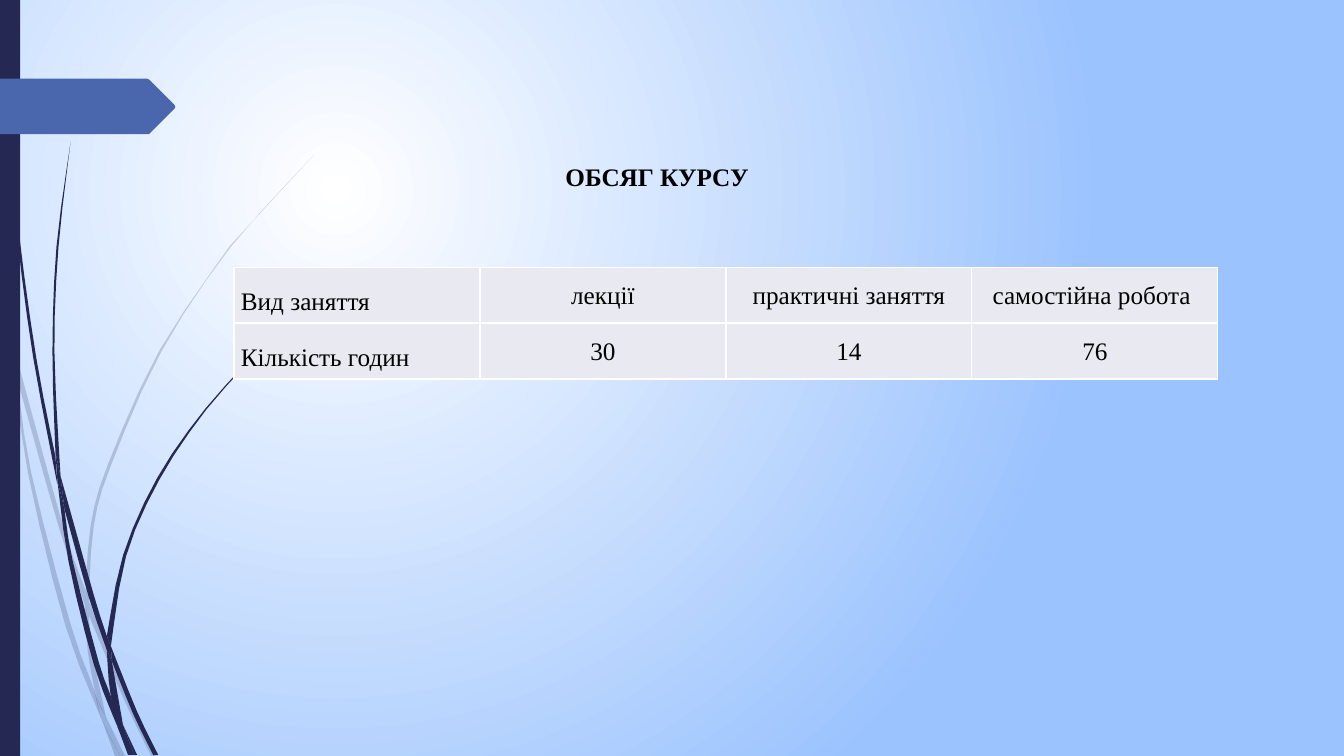
from lxml import etree
from pptx import Presentation
from pptx import util as u
from pptx.dml.color import RGBColor
from pptx.enum import shapes, text
from pptx.oxml.ns import qn

PX = u.Inches(0.01)
WIDTH, HEIGHT = 1333, 750
FONT = "Times New Roman"
SIZE = u.Pt(18)

BLACK = RGBColor(0x00, 0x00, 0x00)
WHITE = RGBColor(0xFF, 0xFF, 0xFF)
SKY = RGBColor(0x9B, 0xC3, 0xFE)
NAVY = RGBColor(0x24, 0x28, 0x52)
BLUE = RGBColor(0x4A, 0x66, 0xAC)
CELL = RGBColor(0xE9, 0xEA, 0xF1)

# Blades of grass: the two edges of each piece
PALE_BLADES = [
    ([(11, 350), (9, 322), (0, 282)], [(0, 299), (10, 344)]),
    ([(17, 376), (58, 522), (84, 599)], [(85, 586), (62, 520), (14, 345)]),
    ([(88, 596), (127, 692), (155, 750)], [(150, 750), (123, 694), (88, 610)]),
    ([(119, 750), (124, 750)], [(105, 711)]),
    ([(99, 707), (93, 683), (70, 619), (31, 469), (17, 376)],
     [(11, 350), (28, 470), (65, 621), (101, 714)]),
    ([(84, 599), (87, 646), (96, 692), (105, 711)], [(91, 646), (88, 610)]),
    ([(88, 596), (93, 522), (110, 462), (160, 349), (229, 245), (312, 153)],
     [(228, 244), (158, 348), (107, 461), (90, 521), (85, 586)]),
    ([(101, 714), (114, 750)], [(119, 750)]),
    ([(88, 610), (88, 596)], [(85, 586), (84, 599)]),
    ([(93, 683), (101, 714), (119, 750)], [(105, 711), (96, 692)]),
]
DARK_BLADES = [
    ([(3, 0), (7, 110), (17, 233), (33, 355), (57, 481)],
     [(55, 453), (36, 355), (19, 232), (8, 109), (4, 0)]),
    ([(64, 505), (88, 592), (106, 645)], [(106, 631), (93, 590), (60, 472)]),
    ([(110, 641), (136, 706), (157, 749)], [(152, 749), (132, 708), (111, 656)]),
    ([(117, 722), (110, 691), (98, 657), (72, 556), (64, 505)],
     [(57, 477), (68, 557), (93, 659), (117, 722)]),
    ([(60, 472), (54, 349), (58, 245), (70, 141)],
     [(70, 141), (56, 245), (52, 349), (55, 449)]),
    ([(133, 749), (136, 749)], [(122, 719)]),
    ([(55, 449), (57, 477)], [(64, 505), (60, 472)]),
    ([(110, 641), (125, 552), (158, 476), (205, 406), (261, 344)],
     [(260, 344), (204, 405), (156, 474), (122, 551), (106, 631)]),
    ([(117, 722), (127, 749)], [(131, 749)]),
    ([(106, 645), (110, 691), (122, 719)], [(111, 656)]),
    ([(106, 645), (111, 656)], [(110, 641), (106, 631)]),
    ([(110, 691), (117, 722), (130, 749)], [(133, 749), (122, 719)]),
]
ARROW = [(0, 78), (146, 78), (148, 79), (173, 104), (174, 106),
         (173, 108), (148, 133), (146, 133), (0, 133)]
HOURS = [
    ["Вид заняття", "лекції", "практичні заняття", "самостійна робота "],
    ["Кількість годин", "30", "14", "76"],
]


def smooth(edge, steps=3):
    """Points of a Catmull-Rom curve through the edge."""
    if len(edge) < 3:
        return edge
    ends = [edge[0], *edge, edge[-1]]
    points = [edge[0]]
    for before, start, stop, after in zip(ends, ends[1:], ends[2:], ends[3:]):
        for step in range(1, steps + 1):
            t = step / steps
            points.append(tuple(
                b + (c - a) / 2 * t
                + (a - 2.5 * b + 2 * c - d / 2) * t ** 2
                + (1.5 * (b - c) + (d - a) / 2) * t ** 3
                for a, b, c, d in zip(before, start, stop, after)))
    return points


def paint(shape, color, opacity=100):
    shape.shadow.inherit = False
    shape.fill.solid()
    shape.fill.fore_color.rgb = color
    shape.line.fill.background()
    if opacity < 100:
        tint = shape.element.spPr.find(qn("a:solidFill"))[0]
        etree.SubElement(tint, qn("a:alpha"), val=str(opacity * 1000))


def add_outline(page, points, color, opacity=100):
    points = [(x * PX, y * PX) for x, y in points]
    builder = page.shapes.build_freeform(*points[0], scale=1)
    builder.add_line_segments(points[1:], close=True)
    paint(builder.convert_to_shape(), color, opacity)


def add_span(para, words, bold=False):
    span = para.add_run()
    span.text = words
    span.font.name = FONT
    span.font.size = SIZE
    span.font.bold = bold
    span.font.color.rgb = BLACK


def set_background(page):
    fill = page.background.fill
    fill.gradient()
    for stop, color, position in zip(fill.gradient_stops, (WHITE, SKY), (0, 1)):
        stop.color.rgb = color
        stop.position = position
    gradient = page.element.find(".//" + qn("a:gradFill"))
    gradient.remove(gradient.find(qn("a:lin")))
    circle = etree.SubElement(gradient, qn("a:path"), path="circle")
    etree.SubElement(circle, qn("a:fillToRect"),
                     l="50000", t="50000", r="100000", b="100000")


def add_borders(cell):
    props = cell._tc.get_or_add_tcPr()
    for index, side in enumerate(("lnL", "lnR", "lnT", "lnB")):
        line = etree.Element(qn("a:" + side), w=str(u.Pt(1)))
        solid = etree.SubElement(line, qn("a:solidFill"))
        etree.SubElement(solid, qn("a:srgbClr"), val=str(WHITE))
        props.insert(index, line)


def add_hours_table(page, left, top, col_width, row_height):
    rows, cols = len(HOURS), len(HOURS[0])
    table = page.shapes.add_table(rows, cols, left * PX, top * PX,
                                  cols * col_width * PX,
                                  rows * row_height * PX).table
    table.first_row = table.horz_banding = False
    for r, row in enumerate(HOURS):
        for c, words in enumerate(row):
            cell = table.cell(r, c)
            margin = (1 if c else 7) * PX
            cell.margin_left = cell.margin_right = margin
            cell.margin_top = cell.margin_bottom = margin
            cell.fill.solid()
            cell.fill.fore_color.rgb = CELL
            add_borders(cell)
            para = cell.text_frame.paragraphs[0]
            para.alignment = text.PP_ALIGN.CENTER if c else text.PP_ALIGN.JUSTIFY
            para.line_spacing = 1.5
            add_span(para, words)


def add_title(page, words, left, top, width, height):
    box = page.shapes.add_textbox(left * PX, top * PX, width * PX, height * PX)
    frame = box.text_frame
    frame.word_wrap = True
    frame.vertical_anchor = text.MSO_ANCHOR.TOP
    add_span(frame.paragraphs[0], words, bold=True)


def main():
    deck = Presentation()
    deck.slide_width, deck.slide_height = WIDTH * PX, HEIGHT * PX
    page = deck.slides.add_slide(deck.slide_layouts[6])
    set_background(page)

    # Grass, side bar and arrow
    for blades, opacity in ((PALE_BLADES, 20), (DARK_BLADES, 100)):
        for near, far in blades:
            add_outline(page, smooth(near) + smooth(far), NAVY, opacity)
    bar = page.shapes.add_shape(shapes.MSO_SHAPE.RECTANGLE,
                                0, 0, 20 * PX, HEIGHT * PX)
    paint(bar, NAVY)
    add_outline(page, ARROW, BLUE)

    # Course hours
    add_hours_table(page, left=232, top=265, col_width=244, row_height=53)
    add_title(page, "ОБСЯГ КУРСУ", 551, 155, 339, 71)

    deck.save("out.pptx")


if __name__ == "__main__":
    main()
